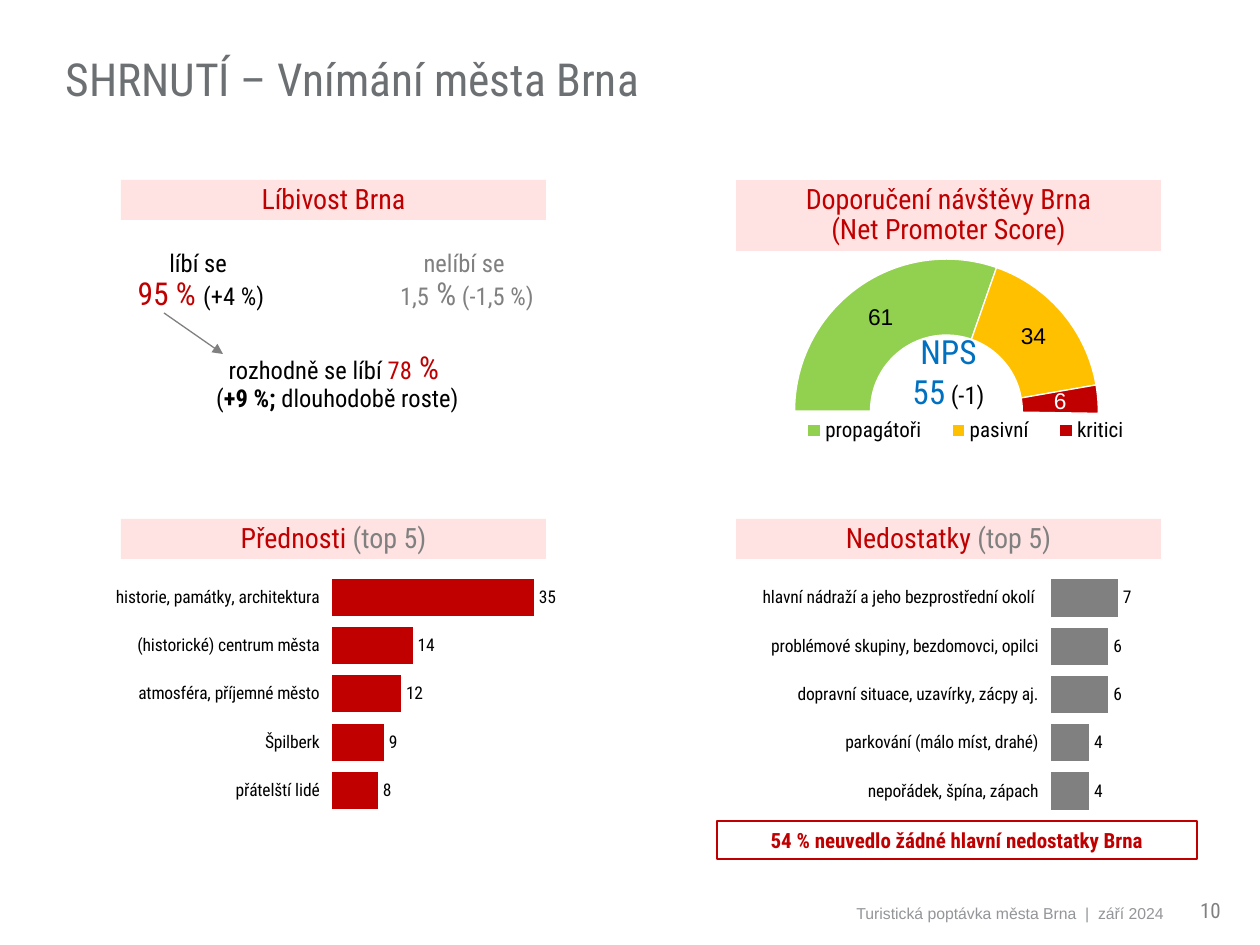
from dataclasses import dataclass

from lxml import etree
from pptx import Presentation
from pptx import util as u
from pptx.chart.data import CategoryChartData
from pptx.dml.color import RGBColor
from pptx.enum import chart as charts, shapes, text
from pptx.oxml import parse_xml
from pptx.oxml.ns import nsdecls, qn


@dataclass(frozen=True)
class Theme:
    """Colours, fonts and type sizes of the deck."""
    red: str = "C00000"
    pink: str = "FFE3E3"
    grey: str = "808080"
    footer_grey: str = "939598"
    title_grey: str = "6D7073"
    blue: str = "0070C0"
    green: str = "92D050"
    amber: str = "FFC000"
    black: str = "000000"
    white: str = "FFFFFF"
    font: str = "Roboto Condensed"
    plain_font: str = "Arial"
    title: int = 26
    score: int = 19
    figure: int = 18
    heading: int = 16
    body: int = 14
    value: int = 13
    note: int = 12
    label: int = 10
    footer: int = 9
    hairline: float = 0.75


THEME = Theme()
PX_PER_INCH = 126


def px(length):
    """Turn pixels into EMU."""
    return u.Emu(round(length * u.Inches(1) / PX_PER_INCH))


def style_font(font, size, color, bold=False, name=THEME.font):
    """Set the face, size, colour and weight of a font."""
    font.name, font.size, font.bold = name, u.Pt(size), bold
    font.color.rgb = RGBColor.from_string(color)


def write(box, spans, align="CENTER", anchor="MIDDLE", spacing=None, inset=None, name=THEME.font):
    """Fill a box with one paragraph of (text, size, colour, bold) spans."""
    frame = box.text_frame
    frame.word_wrap = True
    frame.vertical_anchor = text.MSO_ANCHOR[anchor]
    if inset:
        frame.margin_left = frame.margin_right = px(inset[0])
        frame.margin_top = frame.margin_bottom = px(inset[1])
    para = frame.paragraphs[0]
    para.alignment = text.PP_ALIGN[align]
    if spacing:
        para.line_spacing = spacing
    for words, size, color, *bold in spans:
        for index, line in enumerate(words.split("\n")):
            if index:
                para.add_line_break()
                etree.SubElement(para._p[-1], qn("a:rPr")).set("sz", str(size * 100))
            if line:
                span = para.add_run()
                span.text = line
                style_font(span.font, size, color, bool(bold), name)


def add_text(page, bounds, spans, **layout):
    """Add a text box."""
    write(page.shapes.add_textbox(*map(px, bounds)), spans, **layout)


def add_panel(page, bounds, spans, fill=None, line=None, **layout):
    """Add a rectangle holding text."""
    box = page.shapes.add_shape(shapes.MSO_SHAPE.RECTANGLE, *map(px, bounds))
    box.shadow.inherit = False
    if fill:
        box.fill.solid()
        box.fill.fore_color.rgb = RGBColor.from_string(fill)
    else:
        box.fill.background()
    if line:
        box.line.color.rgb = RGBColor.from_string(line)
        box.line.width = u.Pt(THEME.hairline)
    else:
        box.line.fill.background()
    write(box, spans, **layout)


def add_heading(page, left, top, title, suffix="", height=40):
    """Add a pink section heading with an optional grey suffix."""
    spans = [(title, THEME.heading, THEME.red), (suffix, THEME.heading, THEME.grey)]
    add_panel(page, (left, top, 425, height), spans, fill=THEME.pink, spacing=0.9, inset=(15, 5))


def add_arrow(page, start, end):
    """Add a thin grey arrow."""
    arrow = page.shapes.add_connector(shapes.MSO_CONNECTOR.STRAIGHT, *map(px, start + end))
    arrow.line.color.rgb = RGBColor.from_string(THEME.grey)
    arrow.line.width = u.Pt(THEME.hairline)
    etree.SubElement(arrow.line._get_or_add_ln(), qn("a:tailEnd")).set("type", "triangle")
    etree.SubElement(arrow._element.spPr, qn("a:effectLst"))


def manual_layout(x, y, w, h, inner=False):
    """Build a chart layout from fractions of the chart area."""
    target = '<c:layoutTarget val="inner"/>' if inner else ""
    sizes = "".join(f'<c:{key} val="{val}"/>' for key, val in zip("xywh", (x, y, w, h)))
    return parse_xml(
        f'<c:layout {nsdecls("c")}><c:manualLayout>{target}<c:xMode val="edge"/>'
        f'<c:yMode val="edge"/>{sizes}</c:manualLayout></c:layout>')


def add_chart(page, kind, bounds, plot_area, categories, values):
    """Add a one-series chart with a fixed plot area."""
    data = CategoryChartData()
    data.categories = categories
    data.add_series("Series 1", values)
    chart = page.shapes.add_chart(kind, *map(px, bounds), data).chart
    chart.has_title = chart.has_legend = False
    style_font(chart.font, THEME.label, THEME.black)
    area = chart._chartSpace.chart.plotArea
    for layout in area.findall(qn("c:layout")):
        area.remove(layout)
    area.insert(0, manual_layout(*plot_area, inner=True))
    return chart


def add_bars(page, bounds, plot_area, color, maximum, items):
    """Add a ranked bar chart of (category, value) items."""
    chart = add_chart(page, charts.XL_CHART_TYPE.BAR_CLUSTERED, bounds, plot_area, *zip(*items))
    chart.value_axis.visible = chart.value_axis.has_major_gridlines = False
    chart.value_axis.minimum_scale, chart.value_axis.maximum_scale = 0, maximum
    chart.value_axis.major_unit = 10
    chart.category_axis.reverse_order = True
    chart.category_axis.format.line.fill.background()
    plot = chart.plots[0]
    plot.gap_width, plot.overlap, plot.vary_by_categories = 30, 100, False
    fill = plot.series[0].format.fill
    fill.solid()
    fill.fore_color.rgb = RGBColor.from_string(color)
    plot.has_data_labels = True
    labels = plot.data_labels
    labels.show_value = True
    labels.number_format, labels.number_format_is_linked = "#,##0", False
    labels.position = charts.XL_LABEL_POSITION.OUTSIDE_END
    style_font(labels.font, THEME.label, THEME.black)


def add_half_ring(page, bounds, plot_area, legend_area, items):
    """Add a half doughnut of (category, value, fill, label colour) items."""
    categories, values, fills, inks = zip(*items)
    chart = add_chart(page, charts.XL_CHART_TYPE.DOUGHNUT, bounds, plot_area,
                      categories + ("",), values + (100,))
    plot = chart.plots[0]
    plot._element.find(qn("c:firstSliceAng")).set("val", "270")
    plot._element.find(qn("c:holeSize")).set("val", "60")
    series = plot.series[0]
    series.data_labels.show_value = False
    for index, (fill, ink) in enumerate(zip(fills, inks)):
        point = series.points[index]
        point.format.fill.solid()
        point.format.fill.fore_color.rgb = RGBColor.from_string(fill)
        point.format.line.color.rgb = RGBColor.from_string(THEME.white)
        point.format.line.width = u.Pt(THEME.hairline)
        style_font(point.data_label.font, THEME.value, ink, name=THEME.plain_font)
    hidden = series.points[len(items)].format
    hidden.fill.background()
    hidden.line.fill.background()
    chart.has_legend = True
    legend = chart.legend
    legend.position = charts.XL_LEGEND_POSITION.BOTTOM
    legend.include_in_layout = False
    style_font(legend.font, THEME.note, THEME.black)
    entry = parse_xml(f'<c:legendEntry {nsdecls("c")}><c:idx val="{len(items)}"/>'
                      '<c:delete val="1"/></c:legendEntry>')
    for layout in legend._element.findall(qn("c:layout")):
        legend._element.remove(layout)
    position = legend._element.find(qn("c:legendPos"))
    position.addnext(entry)
    entry.addnext(manual_layout(*legend_area))


def main():
    """Build the summary slide."""
    t = THEME
    deck = Presentation()
    deck.slide_width, deck.slide_height = px(1260), px(945)
    page = deck.slides.add_slide(deck.slide_layouts[5])
    title = page.shapes.title
    title.left, title.top, title.width, title.height = map(px, (53, 16, 903, 125))
    write(title, [("SHRNUTÍ – Vnímání města Brna", t.title, t.title_grey)], align="LEFT")

    add_half_ring(page, (655, 234, 586, 393), (0.238, 0.064, 0.519, 0.773), (0.22, 0.46, 0.62, 0.08), [
        ("propagátoři", 61, t.green, t.black),
        ("pasivní", 34, t.amber, t.black),
        ("kritici", 6, t.red, t.white)])
    left, right, upper, lower = 121, 736, 180, 519
    add_heading(page, left, upper, "Líbivost Brna")
    add_heading(page, right, upper, "Doporučení návštěvy Brna\n(Net Promoter Score)", height=71)
    add_heading(page, left, lower, "Přednosti ", "(top 5)")
    add_heading(page, right, lower, "Nedostatky ", "(top 5)")

    add_text(page, (798, 325, 301, 93), [("NPS\n55", t.score, t.blue), (" (-1)", t.body, t.black)],
             anchor="TOP")
    for bounds, spans in [
        ((101, 234, 200, 96), [("líbí se \n", t.body, t.black), ("95 % ", t.figure, t.red),
                               ("(+4 %)", t.body, t.black)]),
        ((367, 234, 200, 96), [("nelíbí se \n1,5", t.body, t.grey), (" %", t.figure, t.grey),
                               (" (-1,5 %)", t.body, t.grey)]),
        ((132, 335, 411, 96), [("rozhodně se líbí ", t.body, t.black), ("78", t.body, t.red),
                               (" % \n", t.figure, t.red), ("(", t.body, t.black),
                               ("+9 %; ", t.body, t.black, True),
                               ("dlouhodobě roste)", t.body, t.black)]),
    ]:
        add_text(page, bounds, spans, spacing=0.9, inset=(15, 10))
    add_arrow(page, (164, 313), (223, 354))

    add_bars(page, (15, 527, 683, 333), (0.464, 0.139, 0.423, 0.725), t.red, 50, [
        ("historie, památky, architektura", 35), ("(historické) centrum města", 14),
        ("atmosféra, příjemné město", 12), ("Špilberk", 9), ("přátelští lidé", 8)])
    add_bars(page, (699, 519, 683, 333), (0.515, 0.165, 0.422, 0.725), t.grey, 30, [
        ("hlavní nádraží a jeho bezprostřední okolí ", 7),
        ("problémové skupiny, bezdomovci, opilci", 6), ("dopravní situace, uzavírky, zácpy aj.", 6),
        ("parkování (málo míst, drahé)", 4), ("nepořádek, špína, zápach", 4)])
    add_panel(page, (717, 821, 480, 38),
              [("54 % neuvedlo žádné hlavní nedostatky Brna", t.note, t.red, True)], line=t.red)
    add_text(page, (62, 880, 1114, 49),
             [("Turistická poptávka města Brna  |  září 2024", t.footer, t.footer_grey)],
             align="RIGHT", anchor="BOTTOM", name=t.plain_font)
    add_text(page, (1176, 880, 69, 49), [("10", t.note, t.grey)], anchor="BOTTOM")
    deck.save("out.pptx")


if __name__ == "__main__":
    main()
